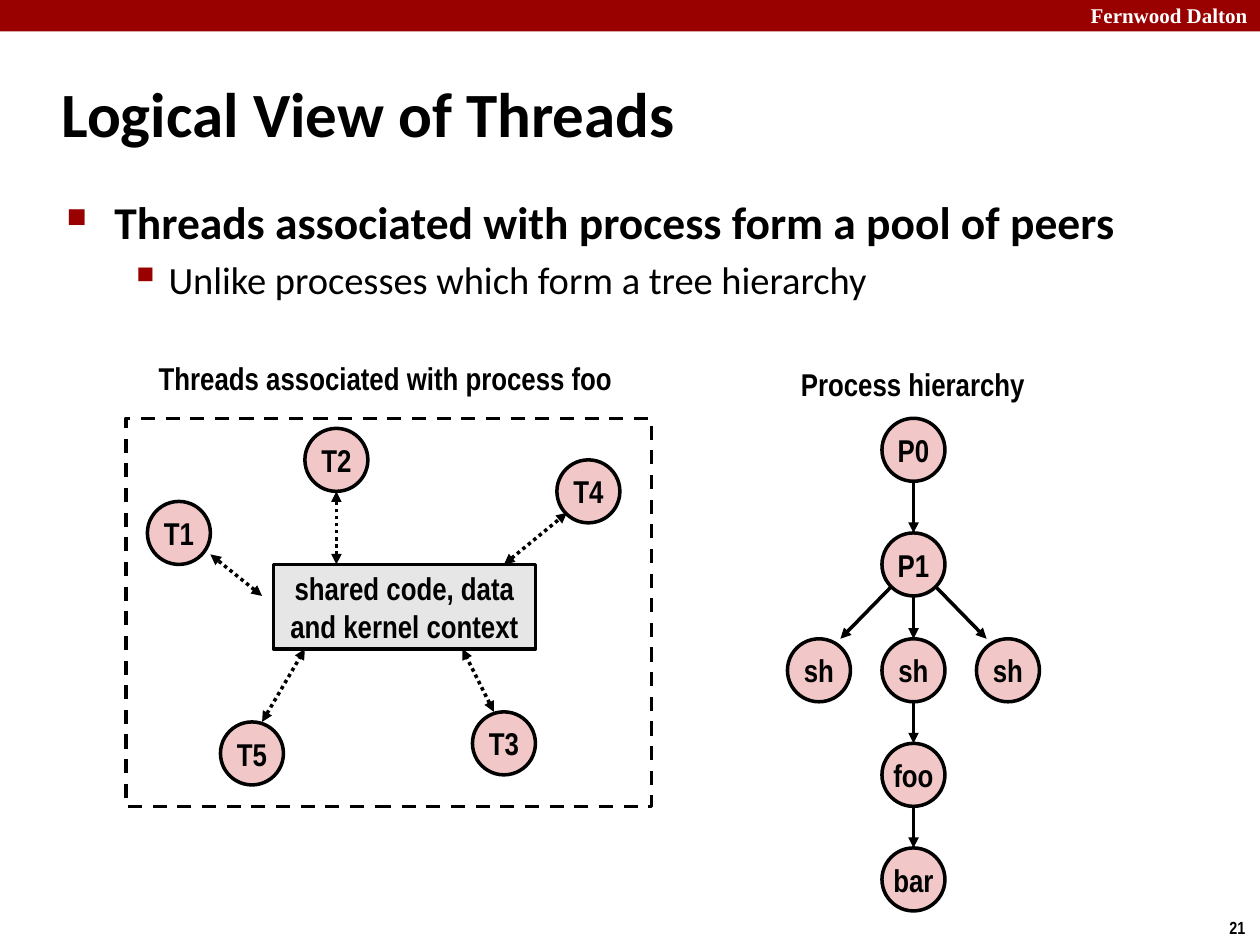
from dataclasses import dataclass

from lxml import etree
from pptx import Presentation
from pptx.dml.color import RGBColor
from pptx.enum.dml import MSO_LINE
from pptx.enum.shapes import MSO_CONNECTOR, MSO_SHAPE
from pptx.enum.text import MSO_ANCHOR, PP_ALIGN
from pptx.oxml.ns import qn
from pptx.util import Inches, Pt

RECTANGLE, OVAL = MSO_SHAPE.RECTANGLE, MSO_SHAPE.OVAL
STRAIGHT = MSO_CONNECTOR.STRAIGHT
DASH, DOTTED = MSO_LINE.DASH, MSO_LINE.ROUND_DOT
TOP, MIDDLE = MSO_ANCHOR.TOP, MSO_ANCHOR.MIDDLE
LEFT, CENTER, RIGHT = PP_ALIGN.LEFT, PP_ALIGN.CENTER, PP_ALIGN.RIGHT


@dataclass(frozen=True)
class Style:
    """Font, size, colour and weight of a text."""
    font: str
    size: int
    color: str = "000000"
    bold: bool = True


class Theme:
    """Colours, line width and type styles of the slide."""
    accent = "990000"
    ink = "000000"
    node = "F1C7C7"
    shared = "E6E6E6"
    stroke = Pt(2)
    brand = Style("Times New Roman", 12, "FFFFFF")
    page = Style("Arial Narrow", 10)
    title = Style("Calibri", 36)
    point = Style("Calibri", 26)
    subpoint = Style("Calibri", 22, bold=False)
    label = Style("Arial Narrow", 18)


@dataclass(frozen=True)
class Box:
    """A rectangle in inches that places parts relative to its corner."""
    left: float
    top: float
    width: float
    height: float

    def inner(self, x, y, width, height):
        """Return a box offset from this one."""
        return Box(self.left + x, self.top + y, width, height)

    def lengths(self):
        """Return left, top, width and height as lengths."""
        return [Inches(v) for v in (self.left, self.top, self.width, self.height)]


def write(shape, text, style, align=LEFT, anchor=TOP, wrap=False):
    """Fill a shape with text in one style."""
    frame = shape.text_frame
    frame.text = text
    frame.word_wrap = wrap
    frame.vertical_anchor = anchor
    for paragraph in frame.paragraphs:
        paragraph.alignment = align
        format_runs(paragraph, style)


def format_runs(paragraph, style):
    """Apply a style to every run of a paragraph."""
    for run in paragraph.runs:
        run.font.name = style.font
        run.font.size = Pt(style.size)
        run.font.bold = style.bold
        run.font.color.rgb = RGBColor.from_string(style.color)


def add_text(slide, box, text, style, **layout):
    """Add a text box."""
    text_box = slide.shapes.add_textbox(*box.lengths())
    write(text_box, text, style, **layout)
    return text_box


def add_block(slide, kind, box, fill=None, line=Theme.ink, dash=None, text=""):
    """Add a preset shape with an optional centred label."""
    block = slide.shapes.add_shape(kind, *box.lengths())
    block.shadow.inherit = False
    if fill:
        block.fill.solid()
        block.fill.fore_color.rgb = RGBColor.from_string(fill)
    else:
        block.fill.background()
    if line:
        block.line.color.rgb = RGBColor.from_string(line)
        block.line.width = Theme.stroke
        block.line.dash_style = dash
    else:
        block.line.fill.background()
    if text:
        write(block, text, Theme.label, CENTER, MIDDLE)


def add_node(slide, box, center, text):
    """Add a labelled circle around a centre given relative to the box."""
    x, y = center
    circle = box.inner(x - 0.25, y - 0.25, 0.5, 0.5)
    add_block(slide, OVAL, circle, Theme.node, text=text)


def add_arrow(slide, box, start, end, dash=None, ends=("tailEnd",)):
    """Add an arrow between two points given relative to the box."""
    points = [Inches(v) for x, y in (start, end) for v in (box.left + x, box.top + y)]
    arrow = slide.shapes.add_connector(STRAIGHT, *points)
    arrow.line.color.rgb = RGBColor.from_string(Theme.ink)
    arrow.line.width = Theme.stroke
    arrow.line.dash_style = dash
    for end_tag in ends:
        etree.SubElement(arrow.line._get_or_add_ln(), qn(f"a:{end_tag}"), type="triangle")
    etree.SubElement(arrow._element.spPr, qn("a:effectLst"))


def add_bullet(paragraph, char, percent, margin, hanging):
    """Give a paragraph a coloured bullet and a hanging indent."""
    props = paragraph._p.get_or_add_pPr()
    props.set("marL", str(Inches(margin)))
    props.set("indent", str(-Inches(hanging)))
    color = etree.SubElement(props, qn("a:buClr"))
    etree.SubElement(color, qn("a:srgbClr"), val=Theme.accent)
    etree.SubElement(props, qn("a:buSzPct"), val=str(percent * 1000))
    etree.SubElement(props, qn("a:buChar"), char=char)


def add_frame(slide, box):
    """Add the top band with its name and the page number."""
    add_block(slide, RECTANGLE, box.inner(0, 0, box.width, 0.25), Theme.accent, line=None)
    add_text(slide, box.inner(7.5, -0.03, 2.5, 0.3), "Fernwood Dalton", Theme.brand,
             align=RIGHT, wrap=True)
    add_text(slide, box.inner(9.66, 7.23, 0.34, 0.27), "21", Theme.page)


def add_points(slide, box):
    """Add the main point and its subpoint."""
    points = (
        ("Threads associated with process form a pool of peers", Theme.point, ("■", 60, 0.38, 0.38)),
        ("Unlike processes which form a tree hierarchy", Theme.subpoint, ("▪", 110, 0.81, 0.31)),
    )
    text = "\n".join(point[0] for point in points)
    body = add_text(slide, box, text, Theme.point, wrap=True)
    for level, (paragraph, (_, style, bullet)) in enumerate(zip(body.text_frame.paragraphs, points)):
        paragraph.level = level
        paragraph.space_before = Pt(style.size * 0.2)
        format_runs(paragraph, style)
        add_bullet(paragraph, *bullet)


def add_thread_pool(slide, box):
    """Add the threads of one process around their shared context."""
    add_text(slide, box.inner(-0.24, -0.52, 4.6, 0.4), "Threads associated with process foo",
             Theme.label, align=CENTER, anchor=MIDDLE)
    add_block(slide, RECTANGLE, box, dash=DASH)
    add_block(slide, RECTANGLE, box.inner(1.17, 1.16, 2.08, 0.67), Theme.shared,
              text="shared code, data\nand kernel context")
    threads = {
        "T1": ((0.42, 0.91), (1.08, 1.41), (0.67, 1.08)),
        "T2": ((1.67, 0.33), (1.67, 1.16), (1.67, 0.58)),
        "T3": ((3, 2.58), (2.92, 2.33), (2.67, 1.83)),
        "T4": ((3.67, 0.58), (3, 1.16), (3.5, 0.75)),
        "T5": ((1, 2.66), (1.08, 2.41), (1.42, 1.83)),
    }
    for name, (center, start, end) in threads.items():
        add_node(slide, box, center, name)
        add_arrow(slide, box, start, end, DOTTED, ("headEnd", "tailEnd"))


def add_process_tree(slide, box):
    """Add the process hierarchy with arrows from parent to child."""
    add_text(slide, box.inner(-0.19, -0.47, 2.37, 0.4), "Process hierarchy",
             Theme.label, align=CENTER, anchor=MIDDLE)
    p0, p1, foo, bar = ((1, y) for y in (0.25, 1.16, 2.83, 3.66))
    shells = [(x, 2) for x in (0.25, 1, 1.75)]
    nodes = [("P0", p0), ("P1", p1), *(("sh", shell) for shell in shells), ("foo", foo), ("bar", bar)]
    for name, center in nodes:
        add_node(slide, box, center, name)
    edges = [(p0, p1), *((p1, shell) for shell in shells), (shells[1], foo), (foo, bar)]
    for (x1, y1), (x2, y2) in edges:
        lean = 0.17 * ((x2 > x1) - (x2 < x1))
        drop = 0.17 if lean else 0.25
        add_arrow(slide, box, (x1 + lean, y1 + drop), (x2 - lean, y2 - 0.25))


def main():
    """Build the slide and save it."""
    deck = Presentation()
    deck.slide_width, deck.slide_height = Inches(10), Inches(7.5)
    slide = deck.slides.add_slide(deck.slide_layouts[6])
    add_frame(slide, Box(0, 0, 10, 7.5))
    add_text(slide, Box(0.39, 0.48, 8.3, 0.83), "Logical View of Threads",
             Theme.title, anchor=MIDDLE, wrap=True)
    add_points(slide, Box(0.43, 1.49, 8.64, 5.44))
    add_process_tree(slide, Box(6.25, 3.32, 2, 3.91))
    add_thread_pool(slide, Box(1, 3.32, 4.17, 3.08))
    deck.save("out.pptx")


if __name__ == "__main__":
    main()
